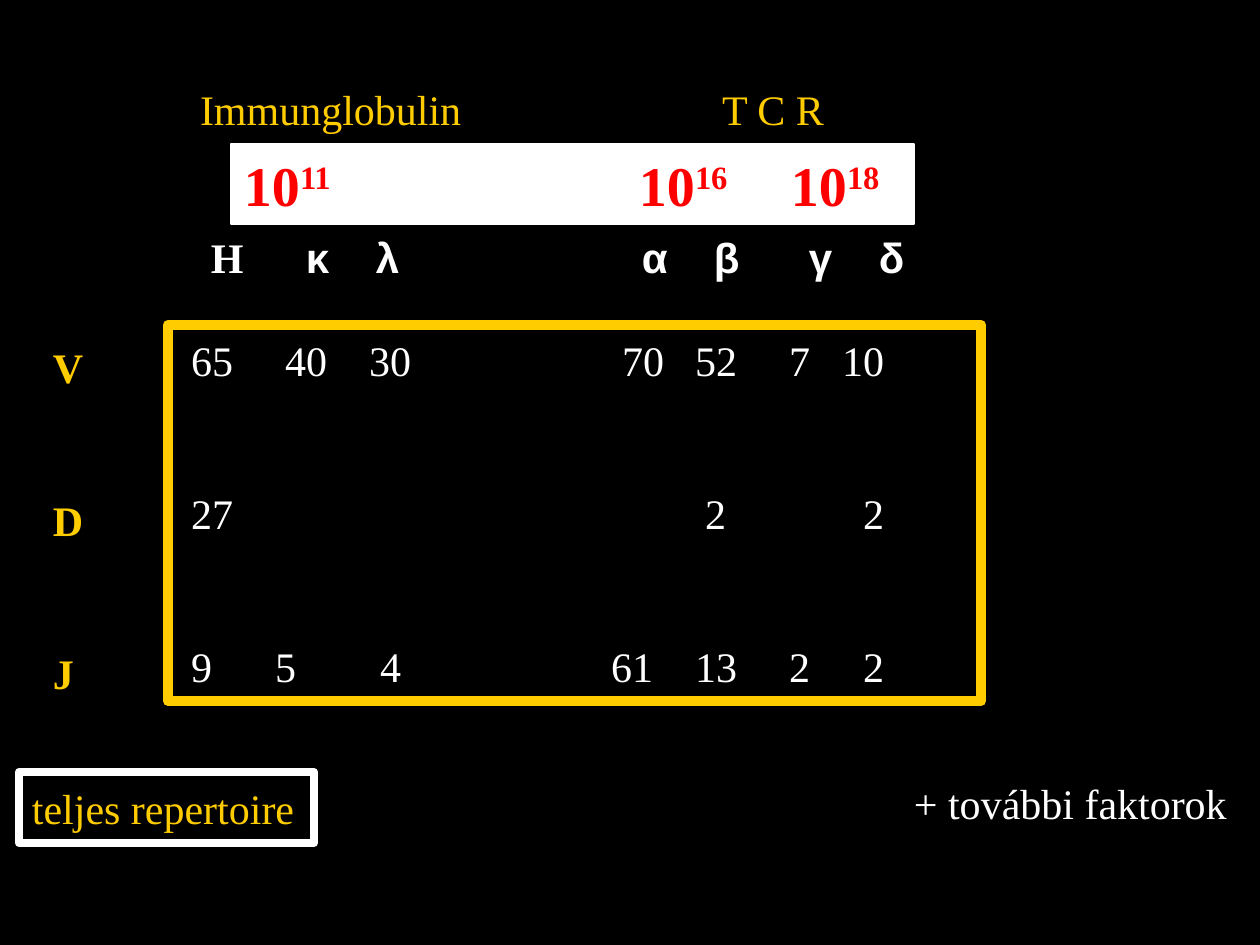
from lxml.etree import SubElement
from pptx import Presentation
from pptx.dml.color import RGBColor
from pptx.enum.shapes import MSO_SHAPE as Shape
from pptx.enum.text import MSO_ANCHOR as Anchor
from pptx.oxml.ns import qn
from pptx.util import Pt

PX = 914400 // 126
INSET_X, INSET_Y = 13, 6
ROW_GAP = 58.5
SERIF, SANS = "Times New Roman", "Arial"
COLORS = {"black": "000000", "white": "FFFFFF", "gold": "FFCC00", "red": "FF0000"}


def rgb(name):
    return RGBColor.from_string(COLORS[name])


class SlideBuilder:
    def __init__(self, deck):
        self.slide = deck.slides.add_slide(deck.slide_layouts[6])
        fill = self.slide.background.fill
        fill.solid()
        fill.fore_color.rgb = rgb("black")

    def text_box(self, x, y, w, h):
        box = self.slide.shapes.add_textbox(x * PX, y * PX, w * PX, h * PX)
        return self.prepare_frame(box, Anchor.TOP)

    def bordered_box(self, x, y, w, h, line, weight, fill=None, inset=INSET_X):
        box = self.slide.shapes.add_shape(Shape.RECTANGLE, x * PX, y * PX, w * PX, h * PX)
        box.shadow.inherit = False
        if fill:
            box.fill.solid()
            box.fill.fore_color.rgb = rgb(fill)
        else:
            box.fill.background()
        box.line.color.rgb = rgb(line)
        box.line.width = Pt(weight)
        return self.prepare_frame(box, Anchor.MIDDLE, inset)

    def prepare_frame(self, box, anchor, inset=INSET_X):
        frame = box.text_frame
        frame.word_wrap = True
        frame.vertical_anchor = anchor
        frame.margin_left, frame.margin_right = inset * PX, 0
        frame.margin_top = frame.margin_bottom = INSET_Y * PX
        return frame

    def paragraph(self, frame, tabs=(), gap=0):
        """Start a left-aligned paragraph; tabs are px from the text edge."""
        first = frame.paragraphs[0]
        para = frame.add_paragraph() if first.runs else first
        para.alignment = 1
        para.space_before = Pt(gap)
        if tabs:
            stops = SubElement(para._p.get_or_add_pPr(), qn("a:tabLst"))
            for stop in tabs:
                SubElement(stops, qn("a:tab"), pos=str(stop * PX), algn="l")
        return para

    def run(self, para, text, color, size=24, bold=False, font=SERIF, raised=False):
        run = para.add_run()
        run.text = text
        run.font.name, run.font.size, run.font.bold = font, Pt(size), bold
        run.font.color.rgb = rgb(color)
        if raised:
            run._r.get_or_add_rPr().set("baseline", "30000")


def main():
    deck = Presentation()
    deck.slide_width, deck.slide_height = 1260 * PX, 945 * PX
    page = SlideBuilder(deck)

    chains = page.paragraph(page.text_box(198, 226, 935, 64),
                            [95, 165, 431, 503, 598, 668])
    page.run(chains, "H", "white", bold=True)
    page.run(chains, "\tκ\tλ\tα\tβ\tγ\tδ", "white", bold=True, font=SANS)

    receptors = page.paragraph(page.text_box(187, 78, 651, 63), [522])
    page.run(receptors, "Immunglobulin\tT C R", "gold")

    segments = page.text_box(40, 336, 55, 365)
    for index, segment in enumerate("VDJ"):
        row = page.paragraph(segments, gap=ROW_GAP if index else 0)
        page.run(row, segment, "gold", bold=True)

    repertoire = page.bordered_box(19, 772, 295, 71, "white", 4.5)
    page.run(page.paragraph(repertoire), "teljes repertoire", "gold")

    diversity_box = page.bordered_box(231, 144, 683, 80, "white", 1, fill="white")
    diversity = page.paragraph(diversity_box, [395, 547])
    for base, exponent in (("10", "11"), ("\t10", "16"), ("\t10", "18")):
        page.run(diversity, base, "red", size=32, bold=True)
        page.run(diversity, exponent, "red", size=32, bold=True, raised=True)

    gene_counts = page.bordered_box(168, 325, 813, 376, "gold", 6, inset=23)
    count_rows = (
        ([65, 40, 30, 70, 52, 7, 10], [94, 178, 431, 504, 598, 651]),
        ([27, 2, 2], [514, 672]),
        ([9, 5, 4, 61, 13, 2, 2], [84, 189, 420, 504, 598, 672]),
    )
    for index, (counts, tabs) in enumerate(count_rows):
        row = page.paragraph(gene_counts, tabs, ROW_GAP if index else 0)
        page.run(row, "\t".join(map(str, counts)), "white")

    factors = page.text_box(901, 772, 338, 63)
    page.run(page.paragraph(factors), "+ további faktorok", "white")

    deck.save("out.pptx")


if __name__ == "__main__":
    main()
